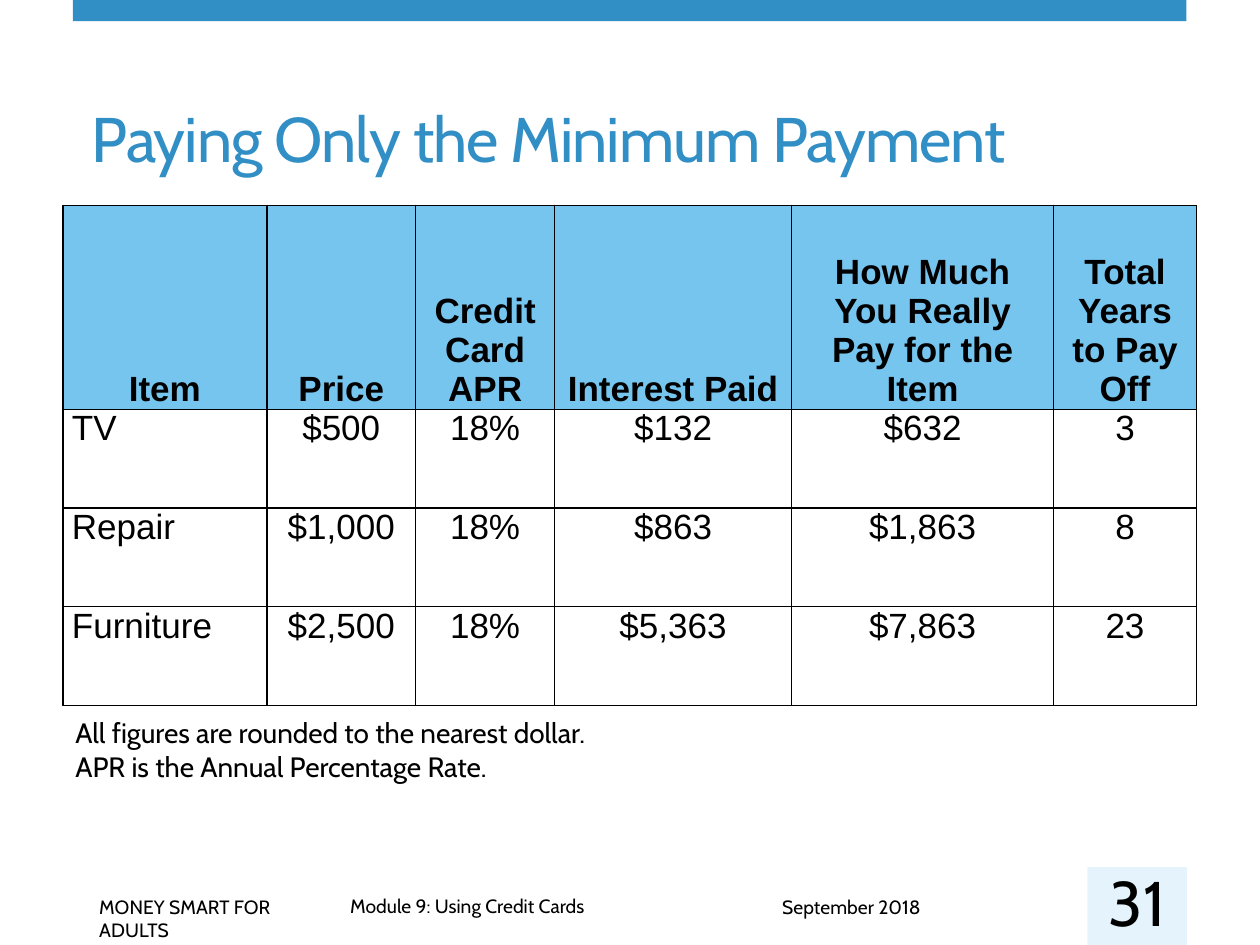
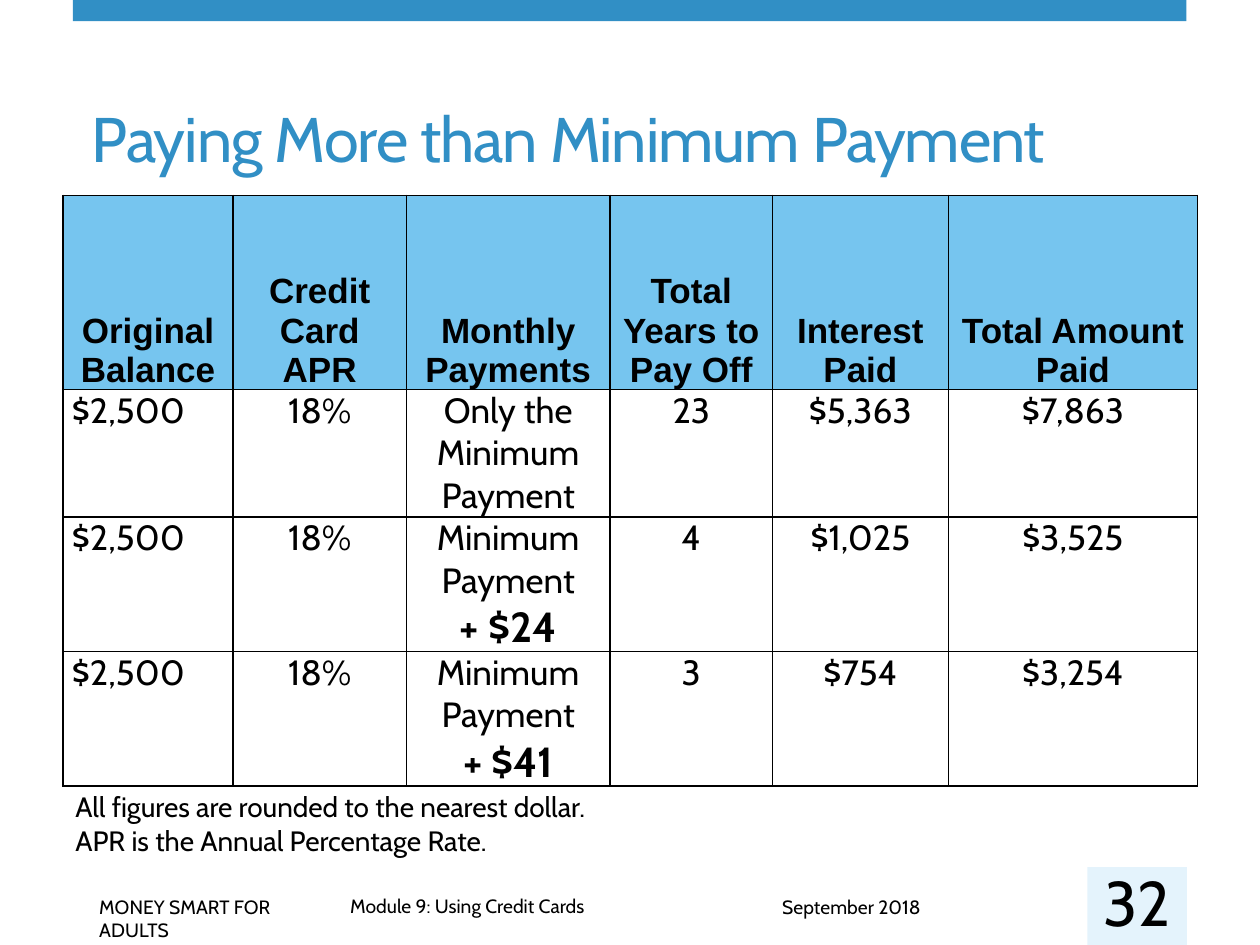
from lxml import etree
from pptx import Presentation
from pptx.dml.color import RGBColor
from pptx.enum import shapes, text
from pptx.oxml import ns
from pptx.util import Cm, Pt

BLUE = RGBColor(0x31, 0x8F, 0xC5)
HEADER_BLUE = RGBColor(0x76, 0xC5, 0xEF)
PALE_BLUE = RGBColor(0xE4, 0xF3, 0xFC)
BLACK = RGBColor(0, 0, 0)

TEXT_FONT = "Cabin"
TABLE_FONT = "Arial"

FOOTERS = [
    ("Module 9: Using Credit Cards", 6.81, 17.91, 14.38),
    ("MONEY SMART FOR ADULTS", 1.75, 17.93, 5.31),
    ("September 2018", 15.52, 17.93, 6.4),
]
TABLE_NOTES = [
    "All figures are rounded to the nearest dollar.",
    "APR is the Annual Percentage Rate.",
]

MINIMUM_ONLY = [
    ["Item", "Price", "Credit Card APR", "Interest Paid",
     "How Much\nYou Really Pay for the Item", "Total Years to Pay Off"],
    ["TV", "$500", "18%", "$132", "$632", "3"],
    ["Repair", "$1,000", "18%", "$863", "$1,863", "8"],
    ["Furniture", "$2,500", "18%", "$5,363", "$7,863", "23"],
]
MORE_THAN_MINIMUM = [
    ["Original Balance", "Credit Card APR", "Monthly Payments",
     "Total Years to Pay Off", "Interest Paid", "Total Amount Paid"],
    ["$2,500", "18%", "Only the Minimum Payment", "23", "$5,363", "$7,863"],
    ["$2,500", "18%", "Minimum\nPayment\n+ $24", "4", "$1,025", "$3,525"],
    ["$2,500", "18%", "Minimum Payment\n+ $41", "3", "$754", "$3,254"],
]


def add_cell_borders(cell):
    properties = cell._tc.get_or_add_tcPr()
    for side in ("a:lnL", "a:lnR", "a:lnT", "a:lnB"):
        line = etree.SubElement(properties, ns.qn(side), w=str(Pt(1)))
        fill = etree.SubElement(line, ns.qn("a:solidFill"))
        etree.SubElement(fill, ns.qn("a:srgbClr"), val=str(BLACK))


class Deck:
    def __init__(self):
        self.presentation = Presentation()
        self.presentation.slide_width = Cm(25.4)
        self.presentation.slide_height = Cm(19.05)
        self.slide = None

    def add_slide(self, title, number):
        layout = self.presentation.slide_layouts[5]
        self.slide = self.presentation.slides.add_slide(layout)
        self.add_band(1.47, 0, 22.45, 0.43, BLUE)
        for words, left, top, width in FOOTERS:
            self.add_text([words], left, top, width, 0.74, 11)
        self.add_band(21.92, 17.48, 2.01, 1.57, PALE_BLUE)
        self.add_title(title)
        self.add_page_number(number)

    def add_run(self, paragraph, words, size, font=TEXT_FONT, color=BLACK, bold=False):
        run = paragraph.add_run()
        run.text = words
        run.font.name = font
        run.font.size = Pt(size)
        run.font.bold = bold
        run.font.color.rgb = color
        return run

    def add_band(self, left, top, width, height, color):
        shape = self.slide.shapes.add_shape(
            shapes.MSO_SHAPE.RECTANGLE, Cm(left), Cm(top), Cm(width), Cm(height))
        shape.shadow.inherit = False
        shape.fill.solid()
        shape.fill.fore_color.rgb = color
        shape.line.fill.background()

    def add_title(self, words):
        title = self.slide.shapes.title
        title.left, title.top = Cm(1.6), Cm(1.22)
        title.width, title.height = Cm(20.83), Cm(2.44)
        frame = title.text_frame
        frame.auto_size = text.MSO_AUTO_SIZE.NONE
        frame.vertical_anchor = text.MSO_ANCHOR.BOTTOM
        paragraph = frame.paragraphs[0]
        paragraph.alignment = text.PP_ALIGN.LEFT
        run = self.add_run(paragraph, words, 36, color=BLUE)
        run.font._element.set("spc", "-60")

    def add_text(self, lines, left, top, width, height, size):
        box = self.slide.shapes.add_textbox(Cm(left), Cm(top), Cm(width), Cm(height))
        frame = box.text_frame
        frame.word_wrap = True
        for index, line in enumerate(lines):
            paragraph = frame.add_paragraph() if index else frame.paragraphs[0]
            self.add_run(paragraph, line, size)
        return frame

    def add_page_number(self, number):
        frame = self.add_text([str(number)], 21.92, 17.68, 2.01, 0.97, 36)
        frame.margin_left = frame.margin_right = 0
        frame.margin_top = frame.margin_bottom = 0
        frame.vertical_anchor = text.MSO_ANCHOR.MIDDLE
        frame.paragraphs[0].alignment = text.PP_ALIGN.CENTER

    def add_table(self, rows, top, widths, heights, body_font):
        table = self.slide.shapes.add_table(
            len(rows), len(widths), Cm(1.27), Cm(top),
            Cm(sum(widths)), Cm(sum(heights))).table
        table.horz_banding = False
        for column, width in zip(table.columns, widths):
            column.width = Cm(width)
        for row, height in zip(table.rows, heights):
            row.height = Cm(height)
        for row_index, row in enumerate(rows):
            for column_index, words in enumerate(row):
                is_header = row_index == 0
                cell = table.cell(row_index, column_index)
                self.fill_cell(cell, words, is_header, body_font)
                if is_header or column_index:
                    cell.text_frame.paragraphs[0].alignment = text.PP_ALIGN.CENTER

    def fill_cell(self, cell, words, is_header, body_font):
        """Style a cell and write its lines; extra payments (+) stand out."""
        cell.margin_left = cell.margin_right = Cm(0.18)
        cell.margin_top = cell.margin_bottom = 0
        add_cell_borders(cell)
        if is_header:
            cell.vertical_anchor = text.MSO_ANCHOR.BOTTOM
            cell.fill.solid()
            cell.fill.fore_color.rgb = HEADER_BLUE
        else:
            cell.fill.background()
        paragraph = cell.text_frame.paragraphs[0]
        paragraph.space_after = Pt(12)
        for index, line in enumerate(words.split("\n")):
            if index:
                paragraph.add_line_break()
            is_extra = line.startswith("+")
            self.add_run(paragraph, line, 24 if is_extra else 20,
                         TABLE_FONT if is_header else body_font,
                         bold=is_header or is_extra)

    def add_table_notes(self, top):
        self.add_text(TABLE_NOTES, 1.27, top, 22.2, 1.63, 16)


def main():
    deck = Deck()

    deck.add_slide("Paying Only the Minimum Payment", 31)
    deck.add_table(MINIMUM_ONLY, 4.14, [4.11, 3, 2.8, 4.78, 5.28, 2.88],
                   [4.11] + [1.99] * 3, TABLE_FONT)
    deck.add_table_notes(14.3)

    deck.add_slide("Paying More than Minimum Payment", 32)
    deck.add_table(MORE_THAN_MINIMUM, 3.94, [3.43, 3.49, 4.11, 3.27, 3.55, 5.02],
                   [3.91, 2.57, 2.69, 2.69], TEXT_FONT)
    deck.add_table_notes(15.8)

    deck.presentation.save("out.pptx")


if __name__ == "__main__":
    main()
